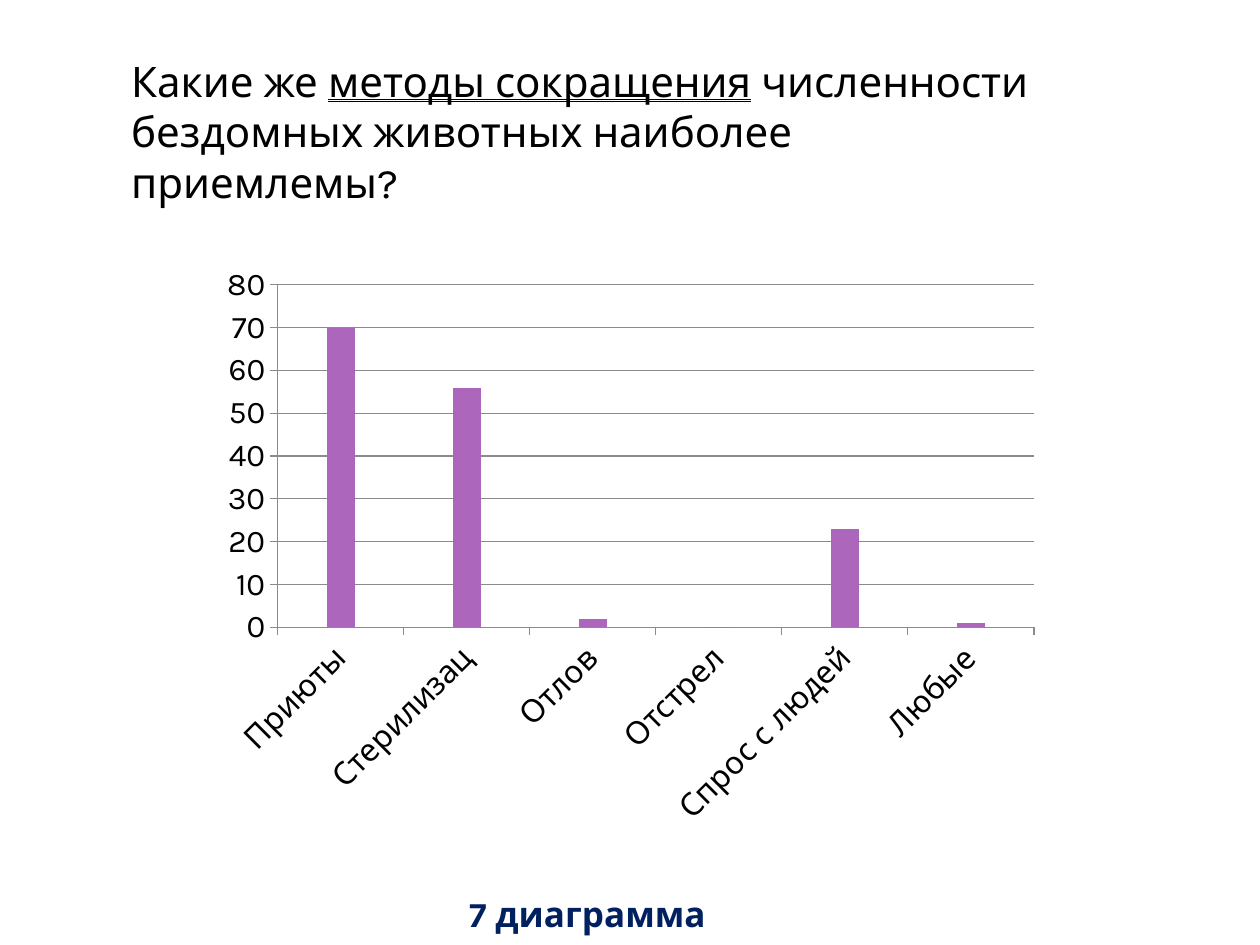
from typing import NamedTuple, Optional

from lxml.etree import SubElement
from pptx import Presentation
from pptx.chart.data import CategoryChartData
from pptx.dml.color import RGBColor
from pptx.enum.chart import XL_CHART_TYPE, XL_TICK_MARK
from pptx.enum.text import MSO_ANCHOR, MSO_AUTO_SIZE, MSO_UNDERLINE, PP_ALIGN
from pptx.oxml.ns import qn
from pptx.util import Inches, Pt

FONT = "Karla"
BLACK = RGBColor(0x00, 0x00, 0x00)
NAVY = RGBColor(0x00, 0x20, 0x60)
GRAY = RGBColor(0x8B, 0x8B, 0x8B)
ROSE = RGBColor(0xB8, 0x3D, 0x68)
PURPLE = RGBColor(0xAC, 0x66, 0xBB)
ORANGE = RGBColor(0xDE, 0x6C, 0x36)


class Series(NamedTuple):
    name: str
    values: list[Optional[int]]
    color: RGBColor


class Span(NamedTuple):
    text: str
    underline: Optional[MSO_UNDERLINE] = None


METHODS = ["Приюты", "Стерилизац", "Отлов", "Отстрел", "Спрос с людей", "Любые"]
NO_VALUES = [None] * len(METHODS)
SERIES = [
    Series("Series 1", NO_VALUES, ROSE),
    Series("Series 2", [70, 56, 2, 0, 23, 1], PURPLE),
    Series("Series 3", NO_VALUES, ORANGE),
]
QUESTION = [
    [
        Span("Какие же "),
        Span("методы сокращения", MSO_UNDERLINE.DOUBLE_LINE),
        Span(" численности"),
    ],
    [Span("бездомных животных наиболее приемлемы?")],
]
PLOT_LAYOUT = {
    "layoutTarget": "inner", "xMode": "edge", "yMode": "edge",
    "x": 0.08, "y": 0.05, "w": 0.9, "h": 0.59,
}


def set_font(font, size: int, color: RGBColor, **formats) -> None:
    for name, value in {"name": FONT, "size": Pt(size), **formats}.items():
        setattr(font, name, value)
    font.color.rgb = color


def place(shape, left: float, top: float, width: float, height: float) -> None:
    shape.left, shape.top = Inches(left), Inches(top)
    shape.width, shape.height = Inches(width), Inches(height)


def add_question(page) -> None:
    title = page.shapes.title
    place(title, 0.94, 0.39, 7.58, 1.31)
    frame = title.text_frame
    frame.word_wrap = True
    frame.auto_size = MSO_AUTO_SIZE.NONE
    frame.vertical_anchor = MSO_ANCHOR.TOP
    for index, spans in enumerate(QUESTION):
        para = frame.add_paragraph() if index else frame.paragraphs[0]
        para.alignment = PP_ALIGN.LEFT
        para.space_before = Pt(0)
        for span in spans:
            run = para.add_run()
            run.text = span.text
            set_font(run.font, 24, BLACK, underline=span.underline)


def set_plot_layout(chart) -> None:
    """Pin the inner plot area, leaving room for the slanted labels."""
    plot_area = chart.element.find(f".//{qn('c:plotArea')}")
    for old in plot_area.findall(qn("c:layout")):
        plot_area.remove(old)
    layout = SubElement(plot_area, qn("c:layout"))
    plot_area.insert(0, layout)
    manual = SubElement(layout, qn("c:manualLayout"))
    for name, value in PLOT_LAYOUT.items():
        SubElement(manual, qn(f"c:{name}")).set("val", str(value))


def add_methods_chart(page) -> None:
    chart_data = CategoryChartData()
    chart_data.categories = METHODS
    for series in SERIES:
        chart_data.add_series(series.name, series.values)
    chart = page.shapes.add_chart(
        XL_CHART_TYPE.COLUMN_CLUSTERED,
        Inches(1.67), Inches(2.03), Inches(6.67), Inches(4.61), chart_data,
    ).chart
    chart.has_legend = False
    chart.has_title = False
    set_font(chart.font, 18, BLACK)

    plot = chart.plots[0]
    plot.vary_by_categories = False
    plot.gap_width = 150
    plot.overlap = 0
    for bars, series in zip(plot.series, SERIES):
        bars.format.fill.solid()
        bars.format.fill.fore_color.rgb = series.color

    value_axis, category_axis = chart.value_axis, chart.category_axis
    value_axis.minimum_scale = 0
    value_axis.maximum_scale = 80
    value_axis.major_unit = 10
    value_axis.has_major_gridlines = True
    for axis in (value_axis, category_axis):
        axis.major_tick_mark = XL_TICK_MARK.OUTSIDE
        set_font(axis.tick_labels.font, 18, BLACK)
    for part in (value_axis, category_axis, value_axis.major_gridlines):
        part.format.line.color.rgb = GRAY
        part.format.line.width = Pt(0.75)

    labels = chart.element.find(f".//{qn('c:catAx')}/{qn('c:txPr')}")
    labels.find(qn("a:bodyPr")).set("rot", str(-45 * 60000))
    set_plot_layout(chart)


def add_caption(page) -> None:
    box = page.shapes.add_textbox(Inches(0.5), Inches(7.03), Inches(5.2), Inches(0.39))
    frame = box.text_frame
    frame.word_wrap = True
    frame.vertical_anchor = MSO_ANCHOR.BOTTOM
    frame.margin_top = frame.margin_bottom = 0
    para = frame.paragraphs[0]
    para.alignment = PP_ALIGN.RIGHT
    run = para.add_run()
    run.text = "7 диаграмма"
    set_font(run.font, 20, NAVY, bold=True)


def main() -> None:
    deck = Presentation()
    deck.slide_width, deck.slide_height = Inches(10), Inches(7.5)
    page = deck.slides.add_slide(deck.slide_layouts.get_by_name("Title Only"))
    add_question(page)
    add_methods_chart(page)
    add_caption(page)
    deck.save("out.pptx")


if __name__ == "__main__":
    main()
